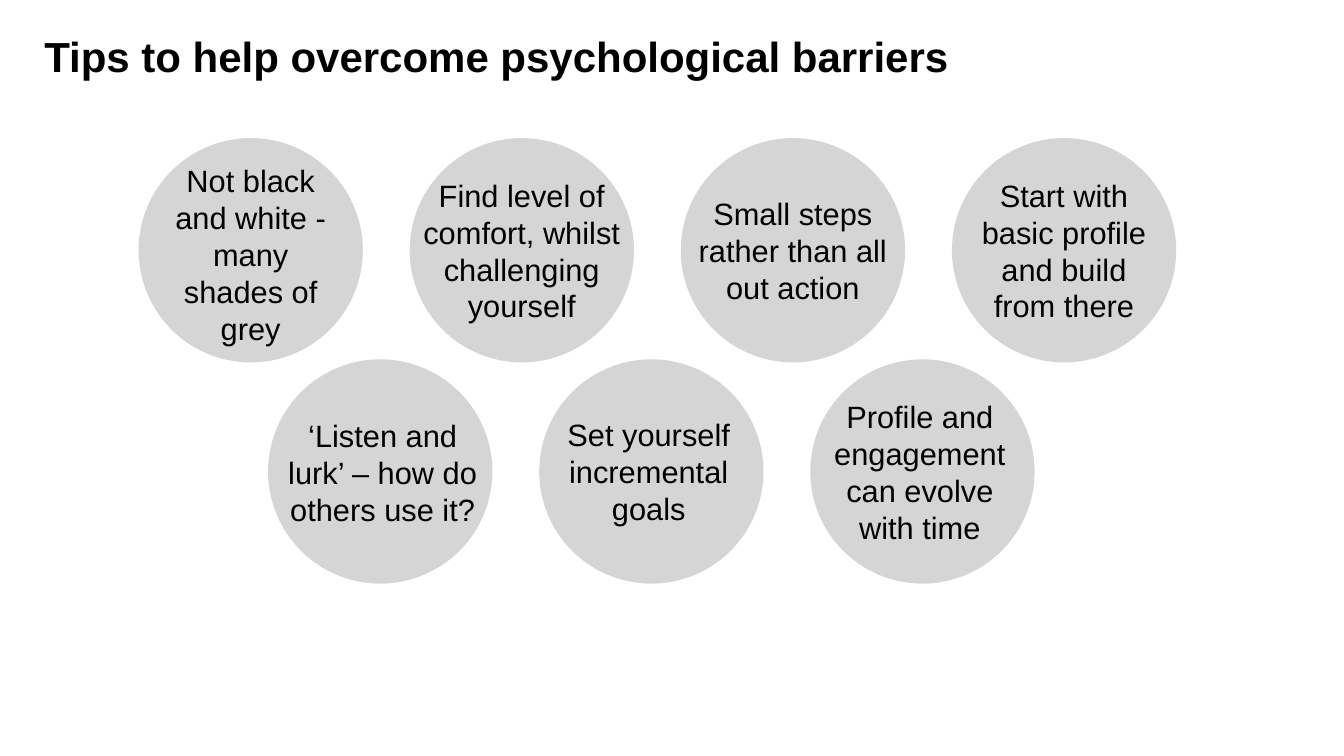
from pptx import Presentation
from pptx.dml.color import RGBColor
from pptx.enum.shapes import MSO_SHAPE as SHAPE
from pptx.enum.text import MSO_ANCHOR as ANCHOR, MSO_AUTO_SIZE as AUTO_SIZE, PP_ALIGN as ALIGN
from pptx.util import Inches, Pt

BLACK = RGBColor(0x00, 0x00, 0x00)
GREY = RGBColor(0xD5, 0xD5, 0xD5)

DIAMETER = 4.45
PITCH = 5.38
LINE_HEIGHT = 0.74
INSET = 0.06

# Each row: left and top of its first circle, then its tips as
# (text, text width, lines, shift right, shift down).
ROWS = [
    (2.75, 2.74, [
        ("Not black and white - many shades of grey", 3.48, 5, 0, 0.07),
        ("Find level of comfort, whilst challenging yourself", 4.67, 4, 0, 0),
        ("Small steps rather than all out action", 3.93, 3, 0, 0),
        ("Start with basic profile and build from there", 3.93, 4, 0, 0),
    ]),
    (5.32, 7.13, [
        ("‘Listen and lurk’ – how do others use it?", 3.93, 3, 0.05, 0.02),
        ("Set yourself incremental goals", 3.93, 3, -0.05, 0),
        ("Profile and engagement can evolve with time", 3.93, 4, -0.05, 0),
    ]),
]


def add_text(left, top, width, height, text, inset, font, **paragraph):
    box = s.shapes.add_textbox(Inches(left), Inches(top), Inches(width), Inches(height))
    tf = box.text_frame
    tf.word_wrap = True
    for side in ("left", "right", "top", "bottom"):
        setattr(tf, f"margin_{side}", Inches(inset))
    p = tf.paragraphs[0]
    for name, value in paragraph.items():
        setattr(p, name, value)
    r = p.add_run()
    r.text = text
    for name, value in font.items():
        setattr(r.font, name, value)
    r.font.color.rgb = BLACK
    return tf


prs = Presentation()
prs.slide_width, prs.slide_height = Inches(26.67), Inches(15)
s = prs.slides.add_slide(prs.slide_layouts[6])

add_text(0.88, 0.6, 24.56, 1.06, "Tips to help overcome psychological barriers", 0,
         {"name": "Arial", "size": Pt(60), "bold": True})

for row_left, top, tips in ROWS:
    for i, (text, width, lines, dx, dy) in enumerate(tips):
        left = row_left + i * PITCH
        sp = s.shapes.add_shape(SHAPE.OVAL, Inches(left), Inches(top),
                                Inches(DIAMETER), Inches(DIAMETER))
        sp.shadow.inherit = False
        sp.fill.solid()
        sp.fill.fore_color.rgb = GREY
        sp.line.fill.background()

        height = lines * LINE_HEIGHT + 2 * INSET
        tf = add_text(left + (DIAMETER - width) / 2 + dx,
                      top + (DIAMETER - height) / 2 + dy,
                      width, height, text, INSET,
                      {"name": "Arial", "size": Pt(44)}, alignment=ALIGN.CENTER)
        tf.vertical_anchor = ANCHOR.MIDDLE
        tf.auto_size = AUTO_SIZE.SHAPE_TO_FIT_TEXT

prs.save("out.pptx")
